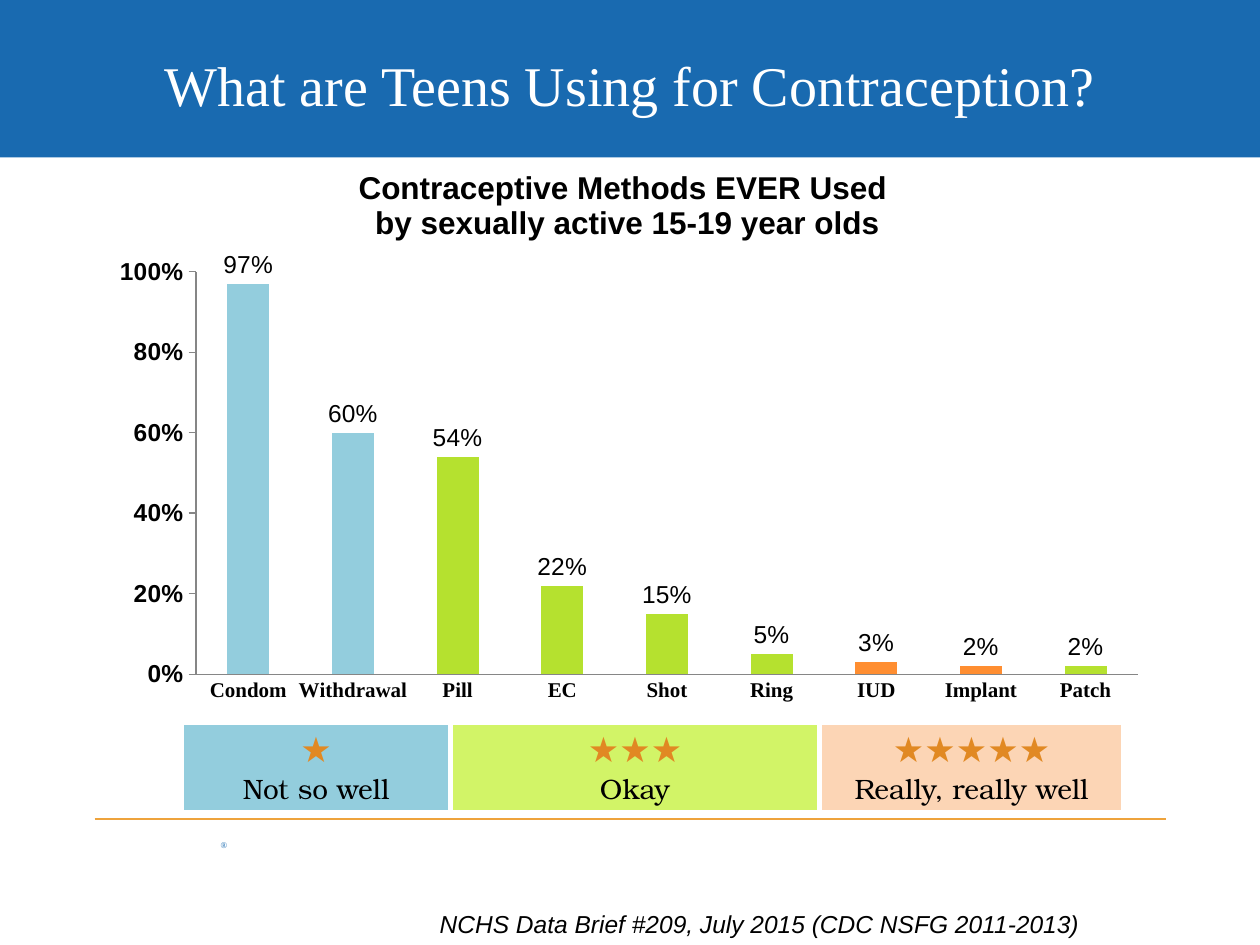
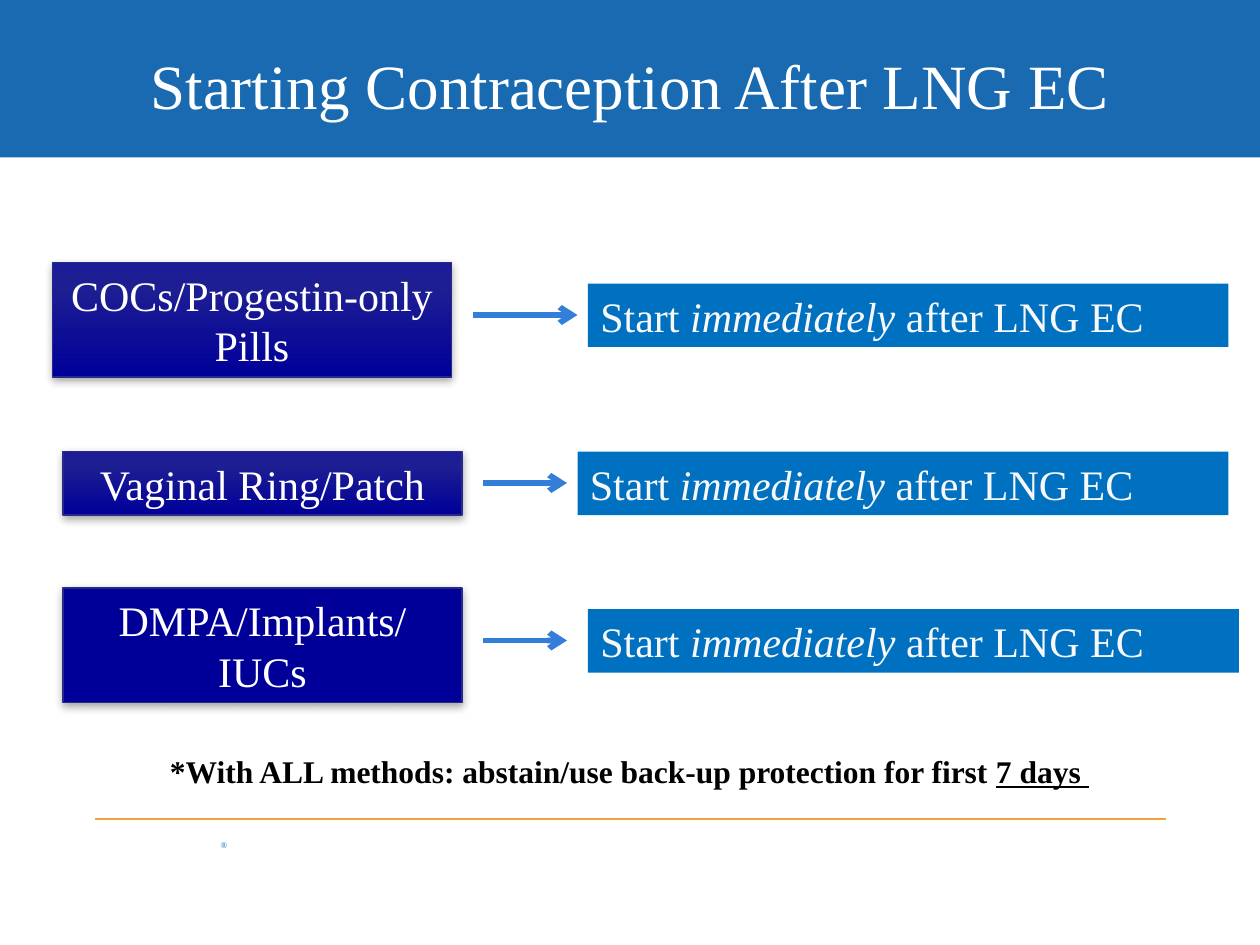
from copy import deepcopy

from pptx import Presentation
from pptx import util as u
from pptx.chart import data as chart_data
from pptx.dml import color as dml
from pptx.enum import chart as ch
from pptx.enum import shapes, text
from pptx.oxml import parse_xml
from pptx.oxml import ns

Pt = u.Pt
SERIF, SANS, BONUM = "Times New Roman", "Arial", "TeX Gyre Bonum"
BLUE, GOLD, NAVY, SKY, ARROW = "196AB0", "EEA33C", "000099", "0070C0", "337ED9"
WHITE, BLACK, STAR, AXIS = "FFFFFF", "000000", "E18923", "868686"
POOR, OKAY, GREAT = "93CDDD", "B5E12F", "FF8E31"
CENTER = text.PP_ALIGN.CENTER

USAGE = [
    ("Condom", 0.97, POOR), ("Withdrawal", 0.6, POOR), ("Pill", 0.54, OKAY),
    ("EC", 0.22, OKAY), ("Shot", 0.15, OKAY), ("Ring", 0.05, OKAY),
    ("IUD", 0.03, GREAT), ("Implant", 0.02, GREAT), ("Patch", 0.02, OKAY),
]
RATINGS = [
    (1, "Not so well", POOR, 153.4),
    (3, "Okay", "D2F467", 211),
    (5, "Really, really well", "FCD5B5", 173.8),
]
GRADIENT = [(0, NAVY), (0.8, "1E1E93"), (1, "1C1C96")]
METHODS = [
    (["COCs/Progestin-only Pills"], True, (30, 150, 228, 65.5), (270, 330, 180), (336, 162, 366, 36.3)),
    (["Vaginal Ring/Patch"], True, (36, 258, 228, 36.3), (276, 324, 276), (330, 258, 372, 36.3)),
    (["DMPA/Implants/", "IUCs"], False, (36, 336, 228, 65.5), (276, 324, 366), (336, 348, 372, 36.3)),
]


def rgb(value):
    """Turn a hex string into a colour."""
    return dml.RGBColor.from_string(value)


def set_font(font, size, color=BLACK, name=SERIF, bold=None, italic=None):
    """Apply size, colour, face and emphasis to a font."""
    font.size, font.name, font.bold, font.italic = Pt(size), name, bold, italic
    font.color.rgb = rgb(color)


def write(frame, lines, size, color=BLACK, align=None, **style):
    """Fill a text frame with paragraphs, each given as a list of (words, emphasis) runs."""
    frame.word_wrap = True
    for index, line in enumerate(lines):
        paragraph = frame.paragraphs[0] if index == 0 else frame.add_paragraph()
        paragraph.alignment = align
        set_font(paragraph.font, size, color, **style)
        for words, emphasis in line:
            run = paragraph.add_run()
            run.text = words
            if emphasis:
                setattr(run.font, emphasis, True)


def plain(*lines):
    """Wrap plain strings as unemphasised paragraphs."""
    return [[(line, None)] for line in lines]


def add_text(slide, box, lines, size, **style):
    """Add a wrapped text box and return its frame."""
    frame = slide.shapes.add_textbox(*map(Pt, box)).text_frame
    write(frame, lines, size, **style)
    return frame


def add_block(slide, box, fill):
    """Add a rectangle without outline or shadow."""
    block = slide.shapes.add_shape(shapes.MSO_SHAPE.RECTANGLE, *map(Pt, box))
    block.shadow.inherit = False
    block.fill.solid()
    block.fill.fore_color.rgb = rgb(fill)
    block.line.fill.background()
    return block


def add_line(slide, start, end, color, width):
    """Add a straight line without shadow."""
    line = slide.shapes.add_connector(shapes.MSO_CONNECTOR.STRAIGHT, *map(Pt, start + end))
    line.line.color.rgb = rgb(color)
    line.line.width = Pt(width)
    line._element.spPr.append(parse_xml(f"<a:effectLst {ns.nsdecls('a')}/>"))
    return line


def add_base(deck, title, size):
    """Add a slide with the title band, footer rule and registered mark."""
    slide = deck.slides.add_slide(deck.slide_layouts[6])
    add_block(slide, (0, 0, 720, 90), BLUE)
    mark = add_text(slide, (126, 480, 18, 6), plain("®"), 5, color=BLUE)
    mark.margin_left = mark.margin_right = mark.margin_top = mark.margin_bottom = 0
    add_line(slide, (54, 468), (666, 468), GOLD, 0.75)
    heading = add_text(slide, (36, 12, 648, 72), plain(title), size, color=WHITE, align=CENTER)
    heading.vertical_anchor = text.MSO_ANCHOR.MIDDLE
    return slide


def set_layout(parent, index, **fractions):
    """Place a chart part by fractions of the chart area."""
    for old in parent.findall(ns.qn("c:layout")):
        parent.remove(old)
    target = '<c:layoutTarget val="inner"/>' if "w" in fractions else ""
    modes = "".join(f'<c:{key}Mode val="edge"/>' for key in "xy")
    sizes = "".join(f'<c:{key} val="{value}"/>' for key, value in fractions.items())
    parent.insert(index, parse_xml(
        f"<c:layout {ns.nsdecls('c')}><c:manualLayout>{target}{modes}{sizes}"
        "</c:manualLayout></c:layout>"))


def add_usage_chart(slide, box):
    """Add the column chart of methods ever used."""
    usage = chart_data.CategoryChartData(number_format="0%")
    usage.categories = [method for method, _, _ in USAGE]
    usage.add_series("Series 1", [share for _, share, _ in USAGE])
    chart = slide.shapes.add_chart(ch.XL_CHART_TYPE.COLUMN_CLUSTERED, *map(Pt, box), usage).chart
    set_font(chart.font, 10)
    chart.has_legend = False
    heading = chart.chart_title
    heading.text_frame.text = "Contraceptive Methods EVER Used \nby sexually active 15-19 year olds"
    for paragraph in heading.text_frame.paragraphs:
        set_font(paragraph.font, 18, name=SANS, bold=True)
    set_layout(heading._element, 1, x=0.24, y=0.03)
    set_layout(chart._chartSpace.chart.plotArea, 0, x=0.09, y=0.22, w=0.89, h=0.71)

    methods, shares = chart.category_axis, chart.value_axis
    set_font(methods.tick_labels.font, 12, bold=True)
    set_font(shares.tick_labels.font, 14, name=SANS, bold=True)
    methods.major_tick_mark = ch.XL_TICK_MARK.NONE
    shares.major_tick_mark = ch.XL_TICK_MARK.OUTSIDE
    shares.has_major_gridlines = False
    shares.minimum_scale, shares.maximum_scale, shares.major_unit = 0, 1, 0.2
    shares.tick_labels.number_format = "0%"
    shares.tick_labels.number_format_is_linked = False
    for axis in (methods, shares):
        axis.format.line.color.rgb = rgb(AXIS)

    plot = chart.plots[0]
    plot.vary_by_categories = False
    plot.gap_width, plot.overlap = 150, -25
    plot.has_data_labels = True
    labels = plot.data_labels
    labels.show_value = True
    labels.position = ch.XL_LABEL_POSITION.OUTSIDE_END
    labels.number_format, labels.number_format_is_linked = "0%", False
    set_font(labels.font, 14, name=SANS)
    for index, (_, _, color) in enumerate(USAGE):
        fill = plot.series[0].points[index].format.fill
        fill.solid()
        fill.fore_color.rgb = rgb(color)


def add_ratings(slide, box):
    """Add the table that rates how well the methods work."""
    table = slide.shapes.add_table(1, len(RATINGS), *map(Pt, box)).table
    table.first_row = table.horz_banding = False
    for index, (stars, verdict, color, width) in enumerate(RATINGS):
        table.columns[index].width = Pt(width)
        cell = table.cell(0, index)
        cell.vertical_anchor = text.MSO_ANCHOR.MIDDLE
        write(cell.text_frame, plain("★" * stars, verdict), 16, align=CENTER, name=BONUM)
        set_font(cell.text_frame.paragraphs[0].font, 20, STAR, SANS)
        cell.fill.solid()
        cell.fill.fore_color.rgb = rgb(color)
        for place, (side, weight) in enumerate(zip("LRTB", (3, 3, 1, 3))):
            cell._tc.get_or_add_tcPr().insert(place, parse_xml(
                f"<a:ln{side} {ns.nsdecls('a')} w=\"{Pt(weight)}\"><a:solidFill>"
                f'<a:srgbClr val="{WHITE}"/></a:solidFill></a:ln{side}>'))


def add_method(slide, names, shaded, box):
    """Add a navy method box with a soft shadow."""
    block = add_block(slide, box, NAVY)
    block.line.color.rgb = rgb("292989")
    block.line.width = Pt(0.75)
    if shaded:
        block.fill.gradient()
        block.fill.gradient_angle = 90
        stops = block._element.spPr.find(".//" + ns.qn("a:gsLst"))
        stops.append(deepcopy(stops[-1]))
        for stop, (position, color) in zip(block.fill.gradient_stops, GRADIENT):
            stop.position = position
            stop.color.rgb = rgb(color)
    block._element.spPr.find(ns.qn("a:effectLst")).append(parse_xml(
        f"<a:outerShdw {ns.nsdecls('a')} blurRad=\"{Pt(5)}\" dist=\"{Pt(1.8)}\" dir=\"5400000\""
        f' rotWithShape="0"><a:srgbClr val="{BLACK}"><a:alpha val="35000"/></a:srgbClr>'
        "</a:outerShdw>"))
    write(block.text_frame, plain(*names), 24, WHITE, CENTER)


def add_start(slide, box):
    """Add the blue box that says when to start."""
    advice = [("Start ", None), ("immediately ", "italic"), ("after LNG EC", None)]
    write(add_block(slide, box, SKY).text_frame, [advice], 24, "F8F8F8", text.PP_ALIGN.LEFT)


def add_arrow(slide, left, right, y):
    """Add a horizontal arrow pointing right."""
    arrow = add_line(slide, (left, y), (right, y), ARROW, 3.25)
    arrow.line._get_or_add_ln().append(parse_xml(f"<a:tailEnd {ns.nsdecls('a')} type=\"arrow\"/>"))


def build_usage_slide(deck):
    """Build the slide on methods teens have used."""
    slide = add_base(deck, "What are Teens Using for Contraception?", 32)
    add_text(slide, (102, 515.8, 522, 24.2),
             plain("NCHS Data Brief #209, July 2015 (CDC NSFG 2011-2013)"), 14,
             align=text.PP_ALIGN.RIGHT, name=SANS, italic=True)
    add_usage_chart(slide, (57.6, 84, 604.8, 324))
    add_ratings(slide, (104, 414, 538.2, 48.2))


def build_starting_slide(deck):
    """Build the slide on starting each method after LNG EC."""
    slide = add_base(deck, "Starting Contraception After LNG EC", 36)
    for names, shaded, method_box, arrow, start_box in METHODS:
        add_method(slide, names, shaded, method_box)
        add_arrow(slide, *arrow)
        add_start(slide, start_box)
    note = [("*With ALL methods: abstain/use back-up protection for first ", None),
            ("7 days ", "underline")]
    add_text(slide, (90, 426, 630, 29), [note], 18, bold=True)


def main():
    """Build and save the deck."""
    deck = Presentation()
    deck.slide_width, deck.slide_height = Pt(720), Pt(540)
    build_usage_slide(deck)
    build_starting_slide(deck)
    deck.save("out.pptx")


if __name__ == "__main__":
    main()
